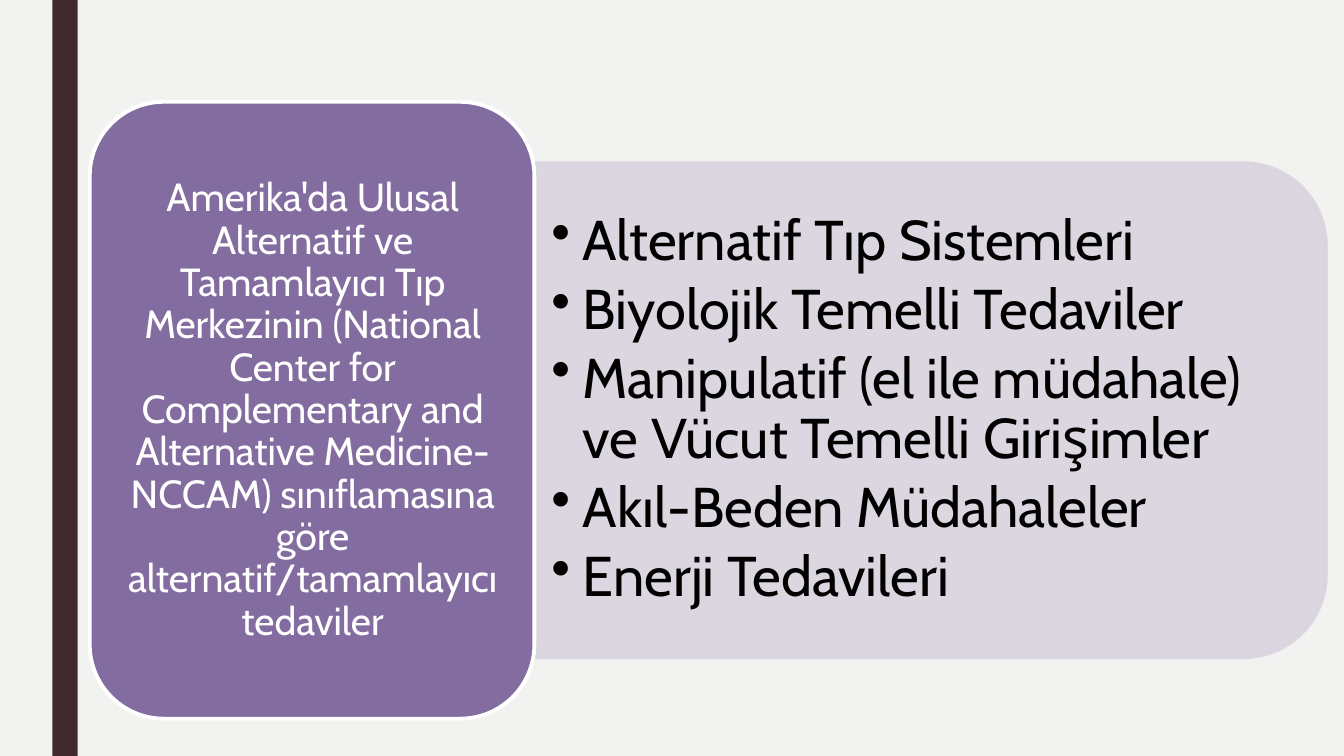
from lxml import etree
from pptx import Presentation
from pptx.dml.color import RGBColor
from pptx.enum.shapes import MSO_SHAPE
from pptx.enum.text import MSO_ANCHOR, PP_ALIGN
from pptx.oxml.ns import qn
from pptx.util import Inches, Pt

RECT = MSO_SHAPE.RECTANGLE
ROUND = MSO_SHAPE.ROUNDED_RECTANGLE
TAB = MSO_SHAPE.ROUND_2_SAME_RECTANGLE
MIDDLE = MSO_ANCHOR.MIDDLE
LEFT, CENTER = PP_ALIGN.LEFT, PP_ALIGN.CENTER

FONT = "Cabin"
COLORS = {
    "back": "F2F2F0",
    "bar": "432A30",
    "panel": "D9D4DF",
    "card": "836C9F",
    "white": "FFFFFF",
    "black": "000000",
}
TOPIC = (
    "Amerika'da Ulusal Alternatif ve Tamamlayıcı Tıp Merkezinin "
    "(National Center for Complementary and Alternative Medicine-NCCAM) "
    "sınıflamasına göre alternatif/tamamlayıcı tedaviler"
)
GROUPS = [
    "Alternatif Tıp Sistemleri",
    "Biyolojik Temelli Tedaviler",
    "Manipulatif (el ile müdahale) ve Vücut Temelli Girişimler",
    "Akıl-Beden Müdahaleler",
    "Enerji Tedavileri",
]


def color(name):
    return RGBColor.from_string(COLORS[name])


def add_block(slide, kind, box, fill, line=None):
    shape = slide.shapes.add_shape(kind, *map(Inches, box))
    shape.shadow.inherit = False
    shape.fill.solid()
    shape.fill.fore_color.rgb = color(fill)
    if line:
        shape.line.color.rgb = color(line)
        shape.line.width = Pt(2.75)
    else:
        shape.line.fill.background()
    return shape


def fade(shape, percent):
    for tone in shape.element.spPr.iter(qn("a:srgbClr")):
        etree.SubElement(tone, qn("a:alpha"), val=str(percent * 1000))


def add_bullet(para):
    props = para._p.get_or_add_pPr()
    indent = Inches(0.31)
    props.set("marL", str(indent))
    props.set("indent", str(-indent))
    etree.SubElement(props, qn("a:buChar"), char="•")


def add_text(slide, box, lines, size, tone, pad, align=LEFT, bullet=False):
    frame = slide.shapes.add_textbox(*map(Inches, box)).text_frame
    frame.word_wrap = True
    frame.vertical_anchor = MIDDLE
    frame.margin_left = frame.margin_right = Inches(pad)
    frame.margin_top = frame.margin_bottom = Inches(pad / 2)
    frame.text = "\n".join(lines)
    for para in frame.paragraphs:
        para.alignment = align
        para.line_spacing = 0.9
        para.space_after = Pt(size * 0.15)
        if bullet:
            add_bullet(para)
        para.font.name = FONT
        para.font.size = Pt(size)
        para.font.color.rgb = color(tone)


def main():
    deck = Presentation()
    deck.slide_width, deck.slide_height = Inches(13.33), Inches(7.5)
    slide = deck.slides.add_slide(deck.slide_layouts[6])
    slide.background.fill.solid()
    slide.background.fill.fore_color.rgb = color("back")

    add_block(slide, RECT, (0.52, 0, 0.25, 7.5), "bar")
    panel = add_block(slide, TAB, (6.78, 0.15, 4.9, 7.84), "panel", "panel")
    panel.rotation = 90
    fade(panel, 90)
    add_text(slide, (5.3, 1.86, 7.6, 4.42), GROUPS, 40, "black", 0.17, bullet=True)
    add_block(slide, ROUND, (0.89, 1.01, 4.41, 6.12), "card", "white")
    add_text(slide, (1.11, 1.23, 3.98, 5.69), [TOPIC], 28, "white", 0.12, CENTER)
    deck.save("out.pptx")


if __name__ == "__main__":
    main()
